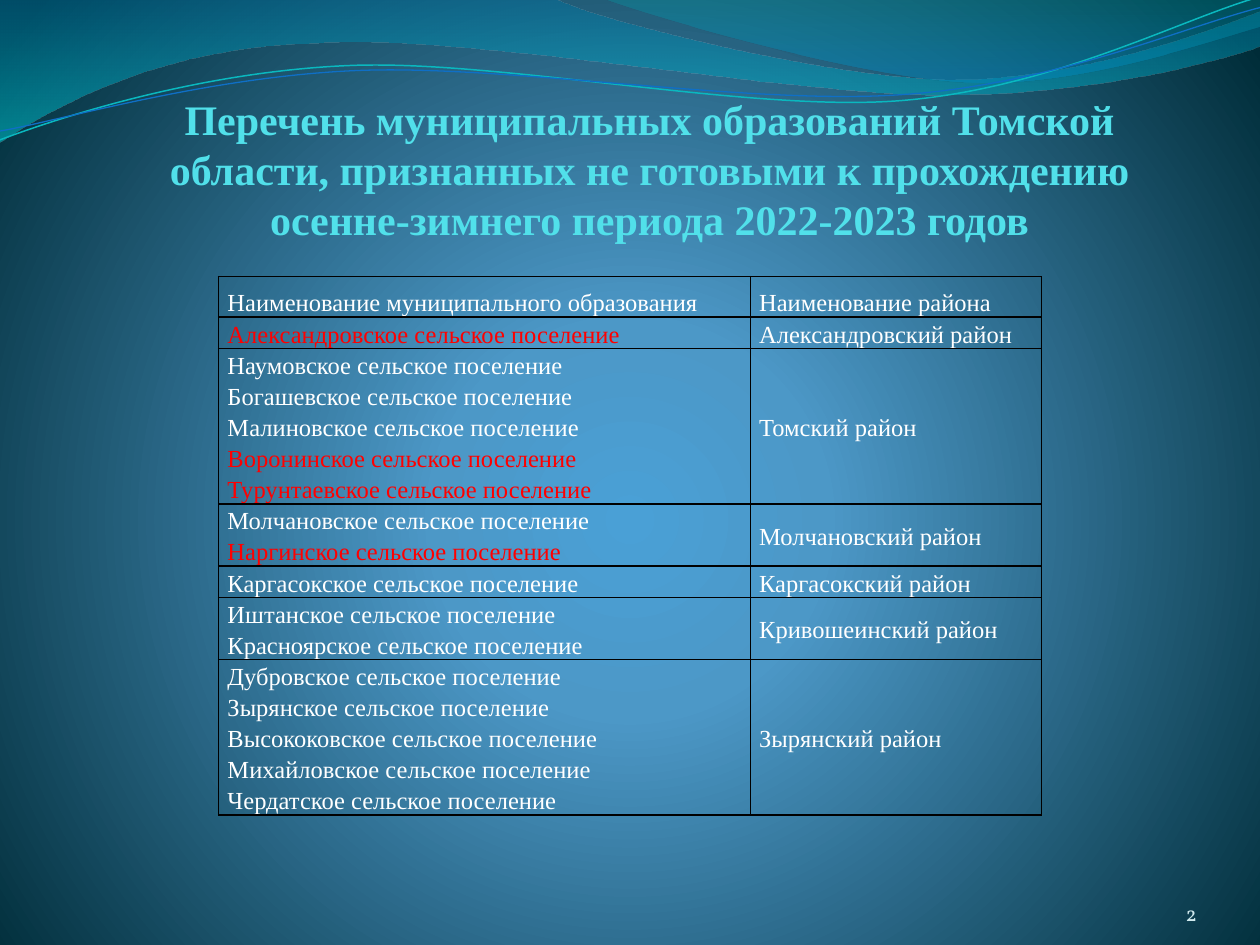
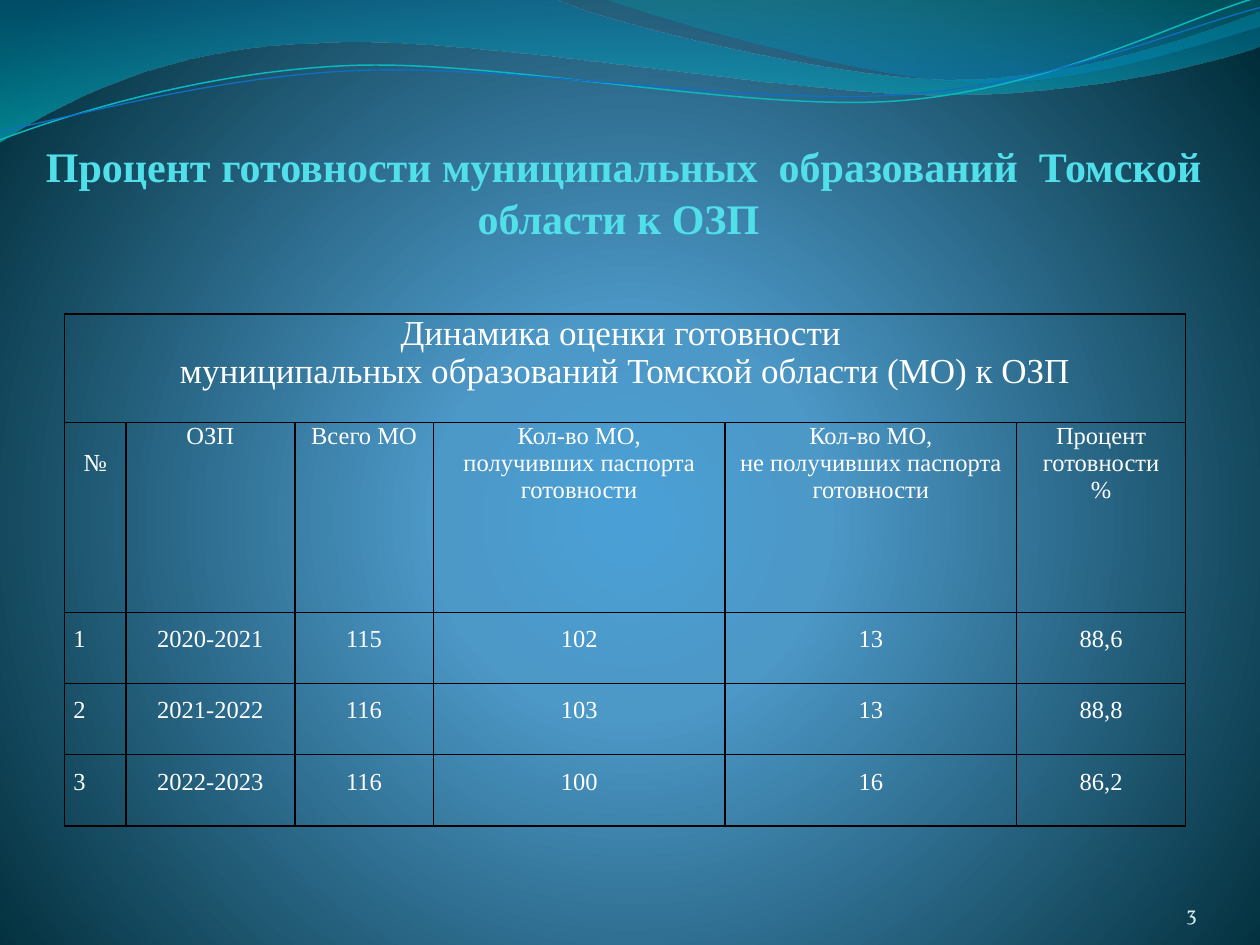
from math import cos, radians, sin

from lxml import etree
from pptx import Presentation
from pptx.dml.color import RGBColor
from pptx.enum.text import MSO_ANCHOR, PP_ALIGN
from pptx.oxml import parse_xml
from pptx.oxml.ns import nsdecls, qn
from pptx.util import Emu, Inches, Pt

LEFT, CENTER, RIGHT, JUSTIFY = (
    PP_ALIGN.LEFT, PP_ALIGN.CENTER, PP_ALIGN.RIGHT, PP_ALIGN.JUSTIFY)
TOP, MIDDLE, BOTTOM = MSO_ANCHOR.TOP, MSO_ANCHOR.MIDDLE, MSO_ANCHOR.BOTTOM

COLORS = {
    "title": "51E0EA", "text": "FFFFFF", "alert": "FF0000", "border": "000000",
    "number": "D1EAEE", "glow": "4AA0D6", "mid": "4C98C7", "edge": "002C38",
    "wave_blue": "0074A1", "wave_teal": "00C6CF",
    "crest_teal": "00A1A9", "crest_blue": "008BBF",
    "line_teal": "0AB8BF", "line_blue": "0F6FC6",
}
SERIF, SPACE_FONT, NUMBER_FONT = "Times New Roman", "Calibri", "Vollkorn"
GRID_COLS, GRID_ROWS = 100, 75
LINE_TILT = -2.7

# Wave outlines in grid cells: a pair is a straight line, six values a curve
WAVE = [(0, 0), (44, -0.1), (47.6, 1.7, 66.4, 6.3, 75.8, 6.3),
        (85.3, 6.3, 95.8, 2.6, 100, 0.9), (100.1, 3.6),
        (98.3, 4.4, 87, 7.6, 74.6, 7.5), (62.2, 7.5, 38.2, 2.8, 25.7, 3.4),
        (12.9, 3.6, 4.6, 8.3, -0.1, 11.3), (0, 0)]
CREST = [(47.9, -0.1), (50.9, 1.1, 68.2, 6.2, 76.9, 6.5),
         (85.6, 6.9, 96.1, 3.2, 100, 2.1), (100, 0), (47.9, -0.1)]
TEAL_LINE = [(0, 11.1), (4.8, 9.3, 15.8, 5.7, 27.7, 5.2),
             (39.5, 4.7, 59.3, 8.9, 71.3, 8), (83.3, 7.1, 93.8, 1.5, 99.8, -0.2)]
BLUE_LINE = [(0, 10.4), (4.7, 9.6, 16.4, 6.1, 28.3, 5.6),
             (40.3, 5.1, 59.7, 8.4, 71.7, 7.5), (83.6, 6.7, 94.1, 2.1, 100, 0.6)]

# Settlements by district; True marks those shown in red
DISTRICTS = [
    ("Александровский", [("Александровское", True)]),
    ("Томский", [("Наумовское", False), ("Богашевское", False),
                 ("Малиновское", False), ("Воронинское", True),
                 ("Турунтаевское", True)]),
    ("Молчановский", [("Молчановское", False), ("Наргинское", True)]),
    ("Каргасокский", [("Каргасокское", False)]),
    ("Кривошеинский", [("Иштанское", False), ("Красноярское", False)]),
    ("Зырянский", [("Дубровское", False), ("Зырянское", False),
                   ("Высококовское", False), ("Михайловское", False),
                   ("Чердатское", False)]),
]
READINESS_HEADS = [
    ["№"], ["ОЗП"], ["Всего МО"],
    ["Кол-во МО,", "получивших паспорта готовности"],
    ["Кол-во МО,", "не получивших паспорта готовности"],
    ["Процент готовности", "%"],
]
READINESS = [
    ("1", "2020-2021", "115", "102", "13", "88,6"),
    ("2", "2021-2022", "116", "103", "13", "88,8"),
    ("3", "2022-2023", "116", "100", "16", "86,2"),
]


def gradient(stops, direction):
    """Gradient fill from (position %, colour, opacity %) stops."""
    marks = ""
    for pos, color, opacity in stops:
        alpha = f'<a:alpha val="{opacity * 1000}"/>' if opacity < 100 else ""
        marks += (f'<a:gs pos="{pos * 1000}"><a:srgbClr val="{COLORS[color]}">'
                  f"{alpha}</a:srgbClr></a:gs>")
    return parse_xml(f'<a:gradFill {nsdecls("a")} rotWithShape="1">'
                     f"<a:gsLst>{marks}</a:gsLst>{direction}</a:gradFill>")


def turn(points, pivot, degrees):
    """Points turned clockwise about a pivot."""
    c, s = cos(radians(degrees)), sin(radians(degrees))
    px, py = pivot
    return [(px + (x - px) * c - (y - py) * s, py + (x - px) * s + (y - py) * c)
            for x, y in points]


def bend(shape, outline):
    """Join each three segments that stand for a curve into one Bezier."""
    segments = iter(shape.element.findall(".//" + qn("a:lnTo")))
    for step in outline[1:]:
        first = next(segments)
        if len(step) == 6:
            curve = etree.Element(qn("a:cubicBezTo"))
            first.addprevious(curve)
            for segment in (first, next(segments), next(segments)):
                curve.append(segment[0])
                segment.getparent().remove(segment)


class Deck:
    def __init__(self):
        self.prs = Presentation()
        self.prs.slide_width, self.prs.slide_height = Inches(10), Inches(7.5)
        self.slide = None

    def x(self, cols):
        return Emu(round(self.prs.slide_width * cols / GRID_COLS))

    def y(self, rows):
        return Emu(round(self.prs.slide_height * rows / GRID_ROWS))

    def box(self, left, top, width, height):
        return self.x(left), self.y(top), self.x(width), self.y(height)

    def add_slide(self):
        self.slide = self.prs.slides.add_slide(self.prs.slide_layouts[5])

    def run(self, paragraph, text, size, color, font=SERIF, bold=False):
        run = paragraph.add_run()
        run.text = text
        run.font.size, run.font.name, run.font.bold = Pt(size), font, bold
        run.font.color.rgb = RGBColor.from_string(COLORS[color])

    def frame(self, frame, anchor, right=0):
        frame.word_wrap, frame.vertical_anchor = True, anchor
        frame.margin_left = frame.margin_top = frame.margin_bottom = 0
        frame.margin_right = self.x(right)

    def title(self, place, runs):
        title = self.slide.shapes.title
        title.left, title.top, title.width, title.height = self.box(*place)
        self.frame(title.text_frame, BOTTOM, right=0.2)
        paragraph = title.text_frame.paragraphs[0]
        paragraph.alignment = CENTER
        for text, size, font in runs:
            self.run(paragraph, text, size, "title", font, bold=True)

    def page_number(self, number):
        frame = self.slide.shapes.add_textbox(*self.box(86.7, 69.5, 8.3, 4)).text_frame
        self.frame(frame, BOTTOM)
        frame.paragraphs[0].alignment = RIGHT
        self.run(frame.paragraphs[0], str(number), 12, "number", NUMBER_FONT)

    def backdrop(self):
        """Glow and waves, placed once on the master."""
        master = self.prs.slide_master
        master.background.fill.solid()
        props = master.element.find(".//" + qn("p:bgPr"))
        props.replace(props[0], gradient(
            [(0, "glow", 100), (25, "mid", 100), (100, "edge", 100)],
            '<a:path path="circle"><a:fillToRect l="10000" t="110000" '
            'r="10000" b="100000"/></a:path>'))
        for outline, stops in (
                (WAVE, [(0, "wave_blue", 45), (100, "wave_teal", 55)]),
                (CREST, [(0, "crest_teal", 30), (80, "crest_blue", 45)])):
            shape = self.outline(outline, closed=True)
            shape.line.fill.background()
            props = shape.element.spPr
            props.replace(props.find(qn("a:noFill")),
                          gradient(stops, '<a:lin ang="5400000" scaled="0"/>'))
        for outline, pivot, color, width in (
                (TEAL_LINE, (49.9, 5.75), "line_teal", 0.85),
                (BLUE_LINE, (49.95, 5.9), "line_blue", 0.75)):
            shape = self.outline(outline, pivot=pivot)
            shape.rotation = LINE_TILT
            shape.line.color.rgb = RGBColor.from_string(COLORS[color])
            shape.line.width = Pt(width)

    def outline(self, outline, closed=False, pivot=None):
        points = [step[i:i + 2] for step in outline for i in range(0, len(step), 2)]
        if pivot:
            points = turn(points, pivot, -LINE_TILT)
        points = [(self.x(col), self.y(row)) for col, row in points]
        builder = self.slide.shapes.build_freeform(*points[0])
        builder.add_line_segments(points[1:], close=closed)
        shape = builder.convert_to_shape()
        bend(shape, outline)
        shape.shadow.inherit = False
        shape.fill.background()
        tree = self.prs.slide_master.shapes.element
        shape.element.find(".//" + qn("p:cNvPr")).set("id", str(100 + len(tree)))
        tree.append(shape.element)
        return shape

    def table(self, left, top, widths, heights):
        place = self.box(left, top, sum(widths), sum(heights))
        table = self.slide.shapes.add_table(len(heights), len(widths), *place).table
        table.first_row = table.horz_banding = False
        for column, width in zip(table.columns, widths):
            column.width = self.x(width)
        for row, height in zip(table.rows, heights):
            row.height = self.y(height)
        for cell in table.iter_cells():
            self.borders(cell)
            cell.fill.background()
        return table

    def borders(self, cell):
        props = cell._tc.get_or_add_tcPr()
        for side in ("lnL", "lnR", "lnT", "lnB"):
            line = etree.SubElement(props, qn("a:" + side), w=str(Pt(1)))
            fill = etree.SubElement(line, qn("a:solidFill"))
            etree.SubElement(fill, qn("a:srgbClr"), val=COLORS["border"])

    def cell(self, cell, lines, align=LEFT, spacing=1.0, anchor=TOP, size=14, top=0):
        """Fill a cell with (text, colour) lines."""
        cell.margin_left = cell.margin_right = self.x(0.7)
        cell.margin_top, cell.margin_bottom = self.y(top), 0
        cell.vertical_anchor = anchor
        for i, (text, color) in enumerate(lines):
            frame = cell.text_frame
            paragraph = frame.add_paragraph() if i else frame.paragraphs[0]
            paragraph.alignment, paragraph.line_spacing = align, spacing
            self.run(paragraph, text, size, color)


def plain(*texts):
    return [(text, "text") for text in texts]


def unready_slide(deck):
    deck.title((8.7, 6.8, 85.9, 12.6), [
        ("Перечень муниципальных образований Томской области, признанных "
         "не готовыми к прохождению осенне-зимнего периода 2022-2023 годов", 24, SERIF)])
    heights = [3.2] + [2.4 * len(places) for _, places in DISTRICTS]
    table = deck.table(17.36, 21.95, [42.2, 23.1], heights)
    heads = ("Наименование муниципального образования", "Наименование района")
    for col, head in enumerate(heads):
        deck.cell(table.cell(0, col), plain(head), JUSTIFY, 1.5)
    for row, (district, places) in enumerate(DISTRICTS, 1):
        settlements = [(f"{name} сельское поселение", "alert" if red else "text")
                       for name, red in places]
        for col, lines in enumerate((settlements, plain(f"{district} район"))):
            deck.cell(table.cell(row, col), lines, LEFT, 1.15, MIDDLE)
    deck.page_number(2)


def readiness_slide(deck):
    deck.title((3.55, 9.9, 92.1, 9.4), [
        ("Процент", 24, SERIF), (" ", 28, SPACE_FONT),
        ("готовности муниципальных  образований  Томской области к ОЗП ", 24, SERIF)])
    table = deck.table(5.13, 24.9, [4.87, 13.4, 11, 23.15, 23.15, 13.4],
                       [8.65, 15.05] + [5.65] * len(READINESS))
    # Caption across all columns
    table.cell(0, 0).merge(table.cell(0, len(READINESS_HEADS) - 1))
    deck.cell(table.cell(0, 0), plain(
        "Динамика оценки готовности ",
        "муниципальных образований Томской области (МО) к ОЗП"), CENTER, size=20)
    # Column heads, the first one a line lower
    for col, head in enumerate(READINESS_HEADS):
        deck.cell(table.cell(1, col), plain(*head), CENTER, top=0 if col else 2.1)
    # Seasons
    for row, season in enumerate(READINESS, 2):
        for col, value in enumerate(season):
            deck.cell(table.cell(row, col), plain(value), CENTER if col else LEFT, 1.5)
    deck.page_number(3)


def main():
    deck = Deck()
    deck.add_slide()
    deck.backdrop()
    unready_slide(deck)
    deck.add_slide()
    readiness_slide(deck)
    deck.prs.save("out.pptx")


if __name__ == "__main__":
    main()
